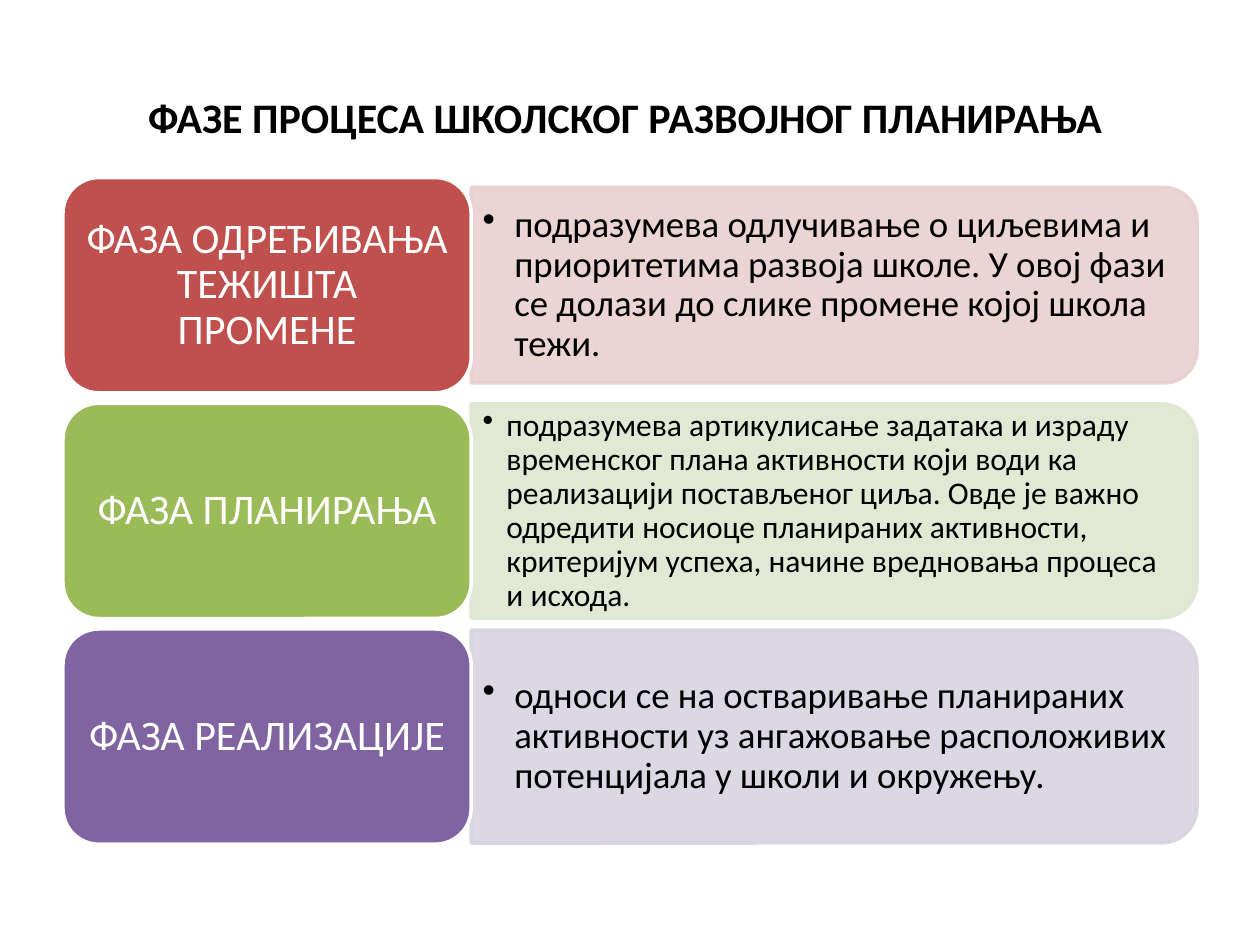
from lxml import etree
from pptx import Presentation
from pptx import util as u
from pptx.dml.color import RGBColor
from pptx.enum import shapes, text
from pptx.oxml.ns import qn

HUES = {
    "ink": "000000", "white": "FFFFFF",
    "red": "C0504D", "pink": "E8D0D0",
    "green": "9BBB59", "mint": "DEE7D1",
    "plum": "8064A2", "lilac": "D8D3E0",
}
TITLE = "ФАЗЕ ПРОЦЕСА ШКОЛСКОГ РАЗВОЈНОГ ПЛАНИРАЊА "
PHASES = [
    ("ФАЗА ОДРЕЂИВАЊА ТЕЖИШТА ПРОМЕНЕ",
     "подразумева одлучивање о циљевима и приоритетима развоја школе. "
     "У овој фази се долази до слике промене којој школа тежи.",
     "red", "pink", 3.94, 21, 0.64),
    ("ФАЗА ПЛАНИРАЊА",
     "подразумева артикулисање задатака и израду временског плана активности "
     "који води ка реализацији постављеног циља. Овде је важно одредити носиоце "
     "планираних активности, критеријум успеха, начине вредновања процеса и исхода.",
     "green", "mint", 4.32, 18, 0.48),
    ("ФАЗА РЕАЛИЗАЦИЈЕ",
     "односи се на остваривање планираних активности уз ангажовање "
     "расположивих потенцијала у школи и окружењу.",
     "plum", "lilac", 4.29, 21, 0.64),
]


def write(shape, words, size, hue="ink", bold=False, align="CENTER",
          space=0.9, pad=(0.23, 0.1), indent=None):
    frame = shape.text_frame
    frame.word_wrap = True
    frame.auto_size = text.MSO_AUTO_SIZE.NONE
    frame.vertical_anchor = text.MSO_ANCHOR.MIDDLE
    frame.margin_left = frame.margin_right = u.Cm(pad[0])
    frame.margin_top = frame.margin_bottom = u.Cm(pad[1])
    para = frame.paragraphs[0]
    para.alignment = getattr(text.PP_ALIGN, align)
    para.line_spacing = space
    run = para.add_run()
    run.text = words
    run.font.name = "Calibri"
    run.font.size = u.Pt(size)
    run.font.bold = bold
    run.font.color.rgb = RGBColor.from_string(HUES[hue])
    if indent:
        props = para._p.get_or_add_pPr()
        props.set("marL", str(u.Cm(indent)))
        props.set("indent", str(-u.Cm(indent)))
        etree.SubElement(props, qn("a:buChar")).set("char", "•")


def block(slide, kind, box, fill, line, alpha=None):
    shape = slide.shapes.add_shape(kind, *map(u.Cm, box))
    shape.shadow.inherit = False
    shape.fill.solid()
    shape.fill.fore_color.rgb = RGBColor.from_string(HUES[fill])
    shape.line.color.rgb = RGBColor.from_string(HUES[line])
    shape.line.width = u.Pt(2)
    if alpha:
        for tint in shape._element.spPr.iter(qn("a:srgbClr")):
            etree.SubElement(tint, qn("a:alpha")).set("val", str(alpha * 1000))
    return shape


def head(slide, box):
    title = slide.shapes.title
    title.left, title.top, title.width, title.height = map(u.Cm, box)
    write(title, TITLE, 24, bold=True, space=1.0)


def phase(slide, box, name, note, dark, light, deep, size, indent):
    left, top, width, height = box
    label = 8.23
    wide = width - label
    edge, mid = left + label, top + height / 2
    pane = block(slide, shapes.MSO_SHAPE.ROUND_2_SAME_RECTANGLE,
                 (edge + (wide - deep) / 2, mid - wide / 2, deep, wide),
                 light, light, alpha=90)
    pane.rotation = 90
    area = (edge, mid - deep / 2 + 0.19, wide - 0.2, deep - 0.38)
    body = slide.shapes.add_textbox(*map(u.Cm, area))
    write(body, note, size, align="LEFT", indent=indent)
    card = block(slide, shapes.MSO_SHAPE.ROUNDED_RECTANGLE,
                 (left, top, label, height), dark, "white")
    write(card, name, 24, hue="white")


def main():
    deck = Presentation()
    deck.slide_width, deck.slide_height = u.Cm(25.4), u.Cm(19.05)
    slide = deck.slides.add_slide(deck.slide_layouts[5])
    head(slide, (1.27, 0.76, 22.86, 3.18))
    for row, parts in enumerate(PHASES):
        phase(slide, (1.27, 3.58 + row * 4.55, 22.86, 4.34), *parts)
    deck.save("out.pptx")


if __name__ == "__main__":
    main()
